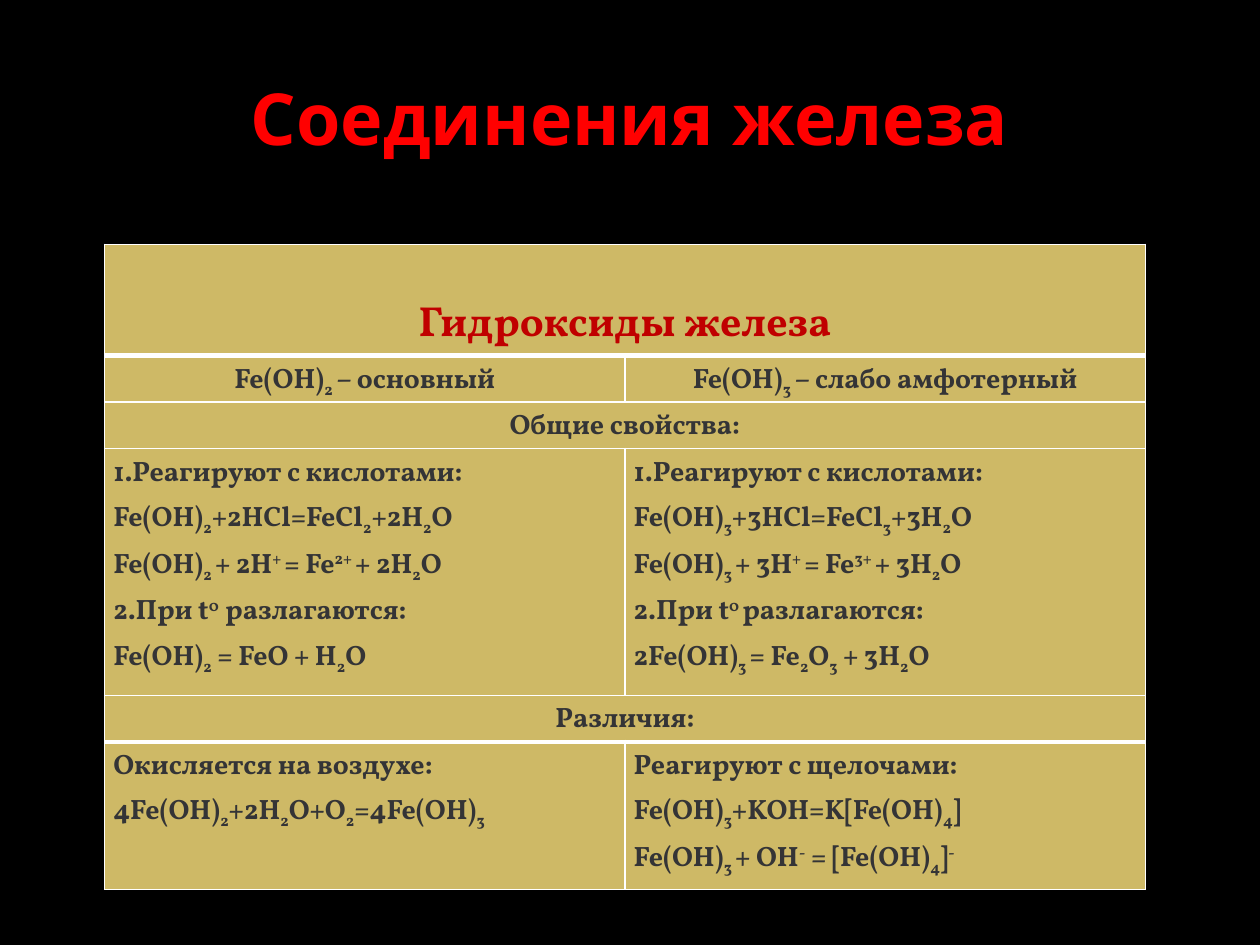
from lxml import etree
from pptx import Presentation, util as u
from pptx.dml.color import RGBColor
from pptx.enum import text
from pptx.oxml import ns

RED, DARK_RED, INK, GOLD, WHITE = "FF0000", "C00000", "343436", "CEB966", "FFFFFF"
HEAD, BODY = "Noto Sans", "Vollkorn"
HEIGHTS = [0.88, 0.37, 0.37, 1.96, 0.37, 1.17]
WIDTH = 4.13
# Each row has one cell (spanning both columns) or two; ~x~ is lowered, ^x^ raised.
ROWS = [
    [["Гидроксиды железа"]],
    [["Fe(OH)~2 ~– основный"], ["Fe(OH)~3 ~– слабо амфотерный"]],
    [["Общие свойства:"]],
    [["1.Реагируют с кислотами:",
      "Fe(OH)~2~+2HCl=FeCl~2~+2H~2~O",
      "Fe(OH)~2 ~+ 2H^+ ^= Fe^2+ ^+ 2H~2~O",
      "2.При t^0  ^разлагаются:",
      "Fe(OH)~2~ = FeO + H~2~O"],
     ["1.Реагируют с кислотами:",
      "Fe(OH)~3~+3HCl=FeCl~3~+3H~2~O",
      "Fe(OH)~3 ~+ 3H^+ ^= Fe^3+ ^+ 3H~2~O",
      "2.При t^0 ^разлагаются:",
      "2Fe(OH)~3 ~= Fe~2~O~3~ + 3H~2~O"]],
    [["Различия:"]],
    [["Окисляется на воздухе:",
      "4Fe(OH)~2~+2H~2~O+O~2~=4Fe(OH)~3~"],
     ["Реагируют с щелочами:",
      "Fe(OH)~3~+KOH=K[Fe(OH)~4~]",
      "Fe(OH)~3 ~+ OH^-^ = [Fe(OH)~4~]^-^"]],
]


def tint(color):
    return RGBColor.from_string(color)


def style(para, face, size, color, center):
    font = para.font
    font.name, font.size, font.bold = face, u.Pt(size), True
    font.color.rgb = tint(color)
    para.alignment = text.PP_ALIGN.CENTER if center else text.PP_ALIGN.LEFT


def add_runs(para, line):
    """Split a marked line into plain, lowered and raised runs."""
    for i, chunk in enumerate(line.split("~")):
        for j, part in enumerate(chunk.split("^")):
            if part:
                run = para.add_run()
                run.text = part
                if i % 2 or j % 2:
                    props = run._r.get_or_add_rPr()
                    props.set("baseline", "-25000" if i % 2 else "30000")


def add_edges(cell, top, bottom):
    props = cell._tc.get_or_add_tcPr()
    sides = [("lnL", 1), ("lnR", 1), ("lnT", top), ("lnB", bottom)]
    for spot, (tag, width) in enumerate(sides):
        line = etree.Element(ns.qn("a:" + tag), w=str(u.Pt(width)))
        fill = etree.SubElement(line, ns.qn("a:solidFill"))
        etree.SubElement(fill, ns.qn("a:srgbClr"), val=WHITE)
        props.insert(spot, line)


def fill_cell(cell, lines, size, color, center):
    frame = cell.text_frame
    for i, line in enumerate(lines):
        para = frame.add_paragraph() if i else frame.paragraphs[0]
        style(para, BODY, size, color, center)
        para.line_spacing = 1.15
        add_runs(para, line)


def add_title(slide, words):
    box = slide.shapes.add_textbox(u.Inches(0.5), u.Inches(0.3), u.Inches(9), u.Inches(1.25))
    frame = box.text_frame
    frame.word_wrap = True
    frame.vertical_anchor = text.MSO_ANCHOR.MIDDLE
    para = frame.paragraphs[0]
    style(para, HEAD, 41, RED, True)
    add_runs(para, words)


def add_grid(slide):
    last = len(ROWS) - 1
    table = slide.shapes.add_table(
        len(ROWS), 2, u.Inches(0.83), u.Inches(1.94),
        u.Inches(2 * WIDTH), u.Inches(sum(HEIGHTS))).table
    for col in table.columns:
        col.width = u.Inches(WIDTH)
    for r, row in enumerate(ROWS):
        table.rows[r].height = u.Inches(HEIGHTS[r])
        for c in range(2):
            cell = table.cell(r, c)
            cell.margin_left = cell.margin_right = u.Inches(0.07)
            cell.margin_top = cell.margin_bottom = 0
            cell.fill.solid()
            cell.fill.fore_color.rgb = tint(GOLD)
            add_edges(cell, 3 if r in (1, last) else 1, 3 if r in (0, last - 1) else 1)
        if len(row) == 1:
            table.cell(r, 0).merge(table.cell(r, 1))
        size, color = (16, INK) if r else (24, DARK_RED)
        for c, lines in enumerate(row):
            fill_cell(table.cell(r, c), lines, size, color, len(lines) == 1)
    table.cell(0, 0).vertical_anchor = text.MSO_ANCHOR.BOTTOM


def main():
    deck = Presentation()
    deck.slide_width, deck.slide_height = u.Inches(10), u.Inches(7.5)
    slide = deck.slides.add_slide(deck.slide_layouts[6])
    back = slide.background.fill
    back.solid()
    back.fore_color.rgb = tint("000000")
    add_title(slide, "Соединения железа")
    add_grid(slide)
    deck.save("out.pptx")


if __name__ == "__main__":
    main()
